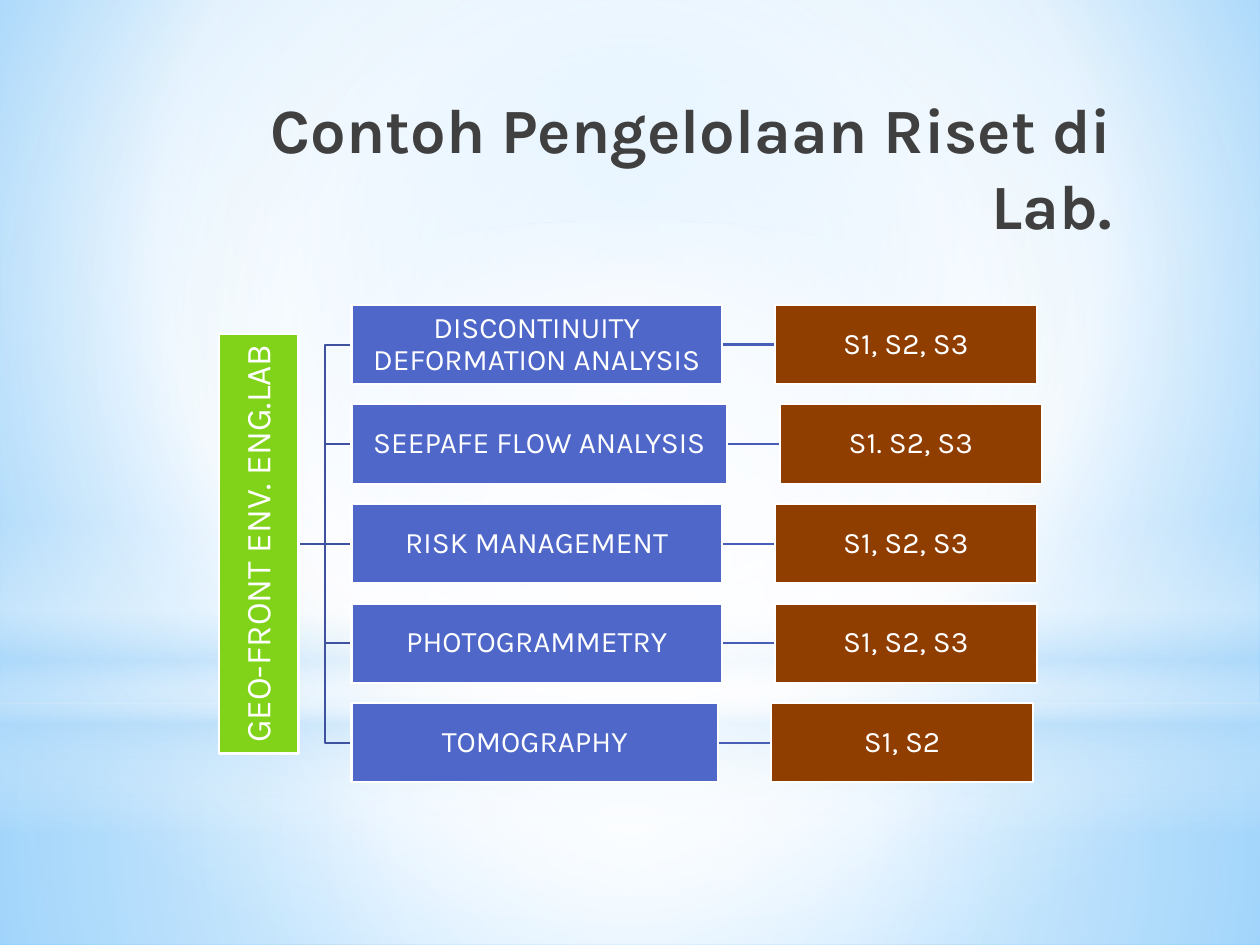
from lxml import etree
from pptx import Presentation
from pptx.dml.color import RGBColor
from pptx.enum.shapes import MSO_CONNECTOR, MSO_SHAPE
from pptx.enum.text import MSO_ANCHOR, PP_ALIGN
from pptx.oxml.ns import qn
from pptx.util import Inches, Pt

RECTANGLE = MSO_SHAPE.RECTANGLE
ELLIPSE = MSO_SHAPE.OVAL
STRAIGHT = MSO_CONNECTOR.STRAIGHT
MIDDLE = MSO_ANCHOR.MIDDLE
TOP = MSO_ANCHOR.TOP
CENTER = PP_ALIGN.CENTER
RIGHT = PP_ALIGN.RIGHT

WHITE = RGBColor(0xFF, 0xFF, 0xFF)
MIST = RGBColor(0xB4, 0xDC, 0xFA)
SKY = RGBColor(0x9E, 0xD5, 0xFF)
AZURE = RGBColor(0x5B, 0xB9, 0xFF)
CHARCOAL = RGBColor(0x40, 0x40, 0x40)
GREEN = RGBColor(0x81, 0xD3, 0x1A)
BLUE = RGBColor(0x4E, 0x67, 0xC8)
BROWN = RGBColor(0x90, 0x3E, 0x00)
BRANCH = RGBColor(0x3E, 0x52, 0xA0)
LINK = RGBColor(0x47, 0x5D, 0xB6)

FONT = "Karla"
LINE_WIDTH = Pt(1.25)
MIDDLE_FOCUS = (50, 50, 50, 50)

BOX_HEIGHT = 0.63
FIRST_TOP = 2.42
ROW_STEP = 0.79
LAB_LEFT = 0.39
LAB_LENGTH = 3.33
LAB_RIGHT = 2.37
TRUNK = 2.58
TOPIC_LEFT = 2.79
GAP = 0.42
LEVEL_WIDTH = 2.08

TOPICS = [
    ("DISCONTINUITY DEFORMATION ANALYSIS", 2.94, "S1, S2, S3"),
    ("SEEPAFE FLOW ANALYSIS", 2.98, "S1. S2, S3"),
    ("RISK MANAGEMENT", 2.94, "S1, S2, S3"),
    ("PHOTOGRAMMETRY", 2.94, "S1, S2, S3"),
    ("TOMOGRAPHY", 2.91, "S1, S2"),
]


def paint_gradient(fill, holder, stops, focus=None):
    fill.solid()
    fill.fore_color.rgb = WHITE
    solid = holder.find(".//" + qn("a:solidFill"))
    gradient = etree.Element(qn("a:gradFill"), rotWithShape="1")
    stop_list = etree.SubElement(gradient, qn("a:gsLst"))
    for position, color, opacity in stops:
        stop = etree.SubElement(stop_list, qn("a:gs"), pos=str(position * 1000))
        shade = etree.SubElement(stop, qn("a:srgbClr"), val=str(color))
        if opacity < 100:
            etree.SubElement(shade, qn("a:alpha"), val=str(opacity * 1000))
    if focus:
        circle = etree.SubElement(gradient, qn("a:path"), path="circle")
        sides = {side: str(value * 1000) for side, value in zip("ltrb", focus)}
        etree.SubElement(circle, qn("a:fillToRect"), **sides)
    else:
        etree.SubElement(gradient, qn("a:lin"), ang="5400000", scaled="0")
    solid.getparent().replace(solid, gradient)


def add_glow(page, kind, top, height, stops, focus=None):
    glow = page.shapes.add_shape(kind, 0, Inches(top), Inches(10), Inches(height))
    glow.shadow.inherit = False
    glow.line.fill.background()
    paint_gradient(glow.fill, glow._element.spPr, stops, focus)


def add_backdrop(page):
    paint_gradient(page.background.fill, page._element,
                   [(0, SKY, 100), (60, WHITE, 100), (100, AZURE, 100)], (20, 10, 20, 60))
    add_glow(page, RECTANGLE, 5.58, 1.92,
             [(0, WHITE, 91), (37, WHITE, 76), (100, MIST, 79)], MIDDLE_FOCUS)
    add_glow(page, RECTANGLE, 0, 5.58,
             [(0, WHITE, 89), (48, WHITE, 62), (100, MIST, 79)], MIDDLE_FOCUS)
    add_glow(page, RECTANGLE, 4.12, 2.5,
             [(0, WHITE, 0), (29, WHITE, 30), (45, MIST, 40),
              (55, WHITE, 26), (65, MIST, 60), (100, WHITE, 0)])
    add_glow(page, ELLIPSE, 1.75, 5.58, [(0, WHITE, 100), (56, WHITE, 0)], MIDDLE_FOCUS)


def write_text(frame, text, size, color, alignment, anchor):
    frame.word_wrap = True
    frame.vertical_anchor = anchor
    para = frame.paragraphs[0]
    para.text = text
    para.alignment = alignment
    para.font.name = FONT
    para.font.size = Pt(size)
    para.font.color.rgb = color
    return para


def add_title(page, text):
    box = page.shapes.add_textbox(Inches(1), Inches(0.67), Inches(7.92), Inches(0.83))
    box.text_frame.margin_left = Inches(0.2)
    para = write_text(box.text_frame, text, 36, CHARCOAL, RIGHT, TOP)
    para.font.bold = True


def add_box(page, text, left, top, width, color, size=17):
    box = page.shapes.add_shape(RECTANGLE, Inches(left), Inches(top),
                                Inches(width), Inches(BOX_HEIGHT))
    box.shadow.inherit = False
    box.fill.solid()
    box.fill.fore_color.rgb = color
    box.line.color.rgb = WHITE
    box.line.width = LINE_WIDTH
    frame = box.text_frame
    frame.margin_left = frame.margin_right = Inches(0.01)
    frame.margin_top = frame.margin_bottom = Inches(0.01)
    para = write_text(frame, text, size, WHITE, CENTER, MIDDLE)
    para.line_spacing = 0.9
    return box


def add_line(page, start, end, y, color):
    line = page.shapes.add_connector(STRAIGHT, Inches(start), Inches(y), Inches(end), Inches(y))
    line.line.color.rgb = color
    line.line.width = LINE_WIDTH
    etree.SubElement(line._element.spPr, qn("a:effectLst"))


def add_branch(page, start_y, end_y):
    corners = [(LAB_RIGHT, start_y), (TRUNK, start_y), (TRUNK, end_y), (TOPIC_LEFT, end_y)]
    start, *rest = [(Inches(x), Inches(y)) for x, y in corners]
    builder = page.shapes.build_freeform(*start)
    builder.add_line_segments(rest, close=False)
    branch = builder.convert_to_shape()
    branch.shadow.inherit = False
    branch.fill.background()
    branch.line.color.rgb = BRANCH
    branch.line.width = LINE_WIDTH


def add_tree(page):
    tops = [FIRST_TOP + row * ROW_STEP for row in range(len(TOPICS))]
    lab_top = tops[len(tops) // 2]
    lab_y = lab_top + BOX_HEIGHT / 2
    for top, (topic, width, levels) in zip(tops, TOPICS):
        y = top + BOX_HEIGHT / 2
        topic_right = TOPIC_LEFT + width
        add_line(page, topic_right, topic_right + GAP, y, LINK)
        if top == lab_top:
            add_line(page, LAB_RIGHT, TOPIC_LEFT, y, BRANCH)
        else:
            add_branch(page, lab_y, y)
    lab = add_box(page, "GEO-FRONT ENV. ENG.LAB", LAB_LEFT, lab_top, LAB_LENGTH, GREEN, 20)
    lab.rotation = 270
    for top, (topic, width, levels) in zip(tops, TOPICS):
        add_box(page, topic, TOPIC_LEFT, top, width, BLUE)
        add_box(page, levels, TOPIC_LEFT + width + GAP, top, LEVEL_WIDTH, BROWN)


def main():
    deck = Presentation()
    deck.slide_width = Inches(10)
    deck.slide_height = Inches(7.5)
    page = deck.slides.add_slide(deck.slide_layouts[6])
    add_backdrop(page)
    add_title(page, "Contoh Pengelolaan Riset di Lab.")
    add_tree(page)
    deck.save("out.pptx")


if __name__ == "__main__":
    main()
